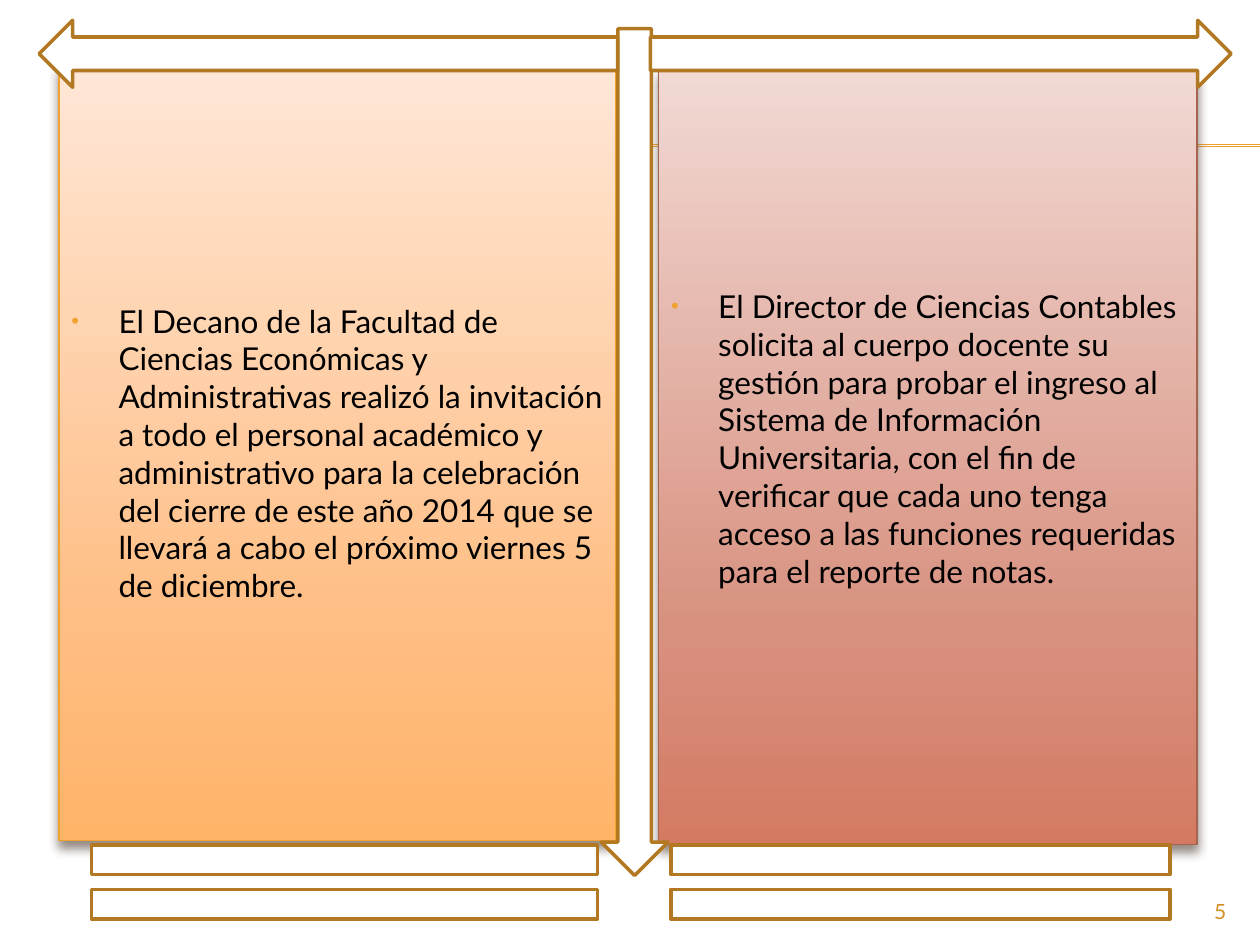
import copy

import pptx
import pptx.dml.color
import pptx.enum.shapes
import pptx.enum.text
import pptx.oxml
import pptx.oxml.ns
import pptx.util

Cm, Pt = pptx.util.Cm, pptx.util.Pt
MSO = pptx.enum.shapes.MSO_SHAPE
ALIGN = pptx.enum.text.PP_ALIGN
ANCHOR = pptx.enum.text.MSO_ANCHOR
qn = pptx.oxml.ns.qn

# Content: boxes are left, top, width, height in cm
PANELS = [
    dict(box=(1.19, 1.32, 11.23, 15.62), line="F0A22E", bottom=0.13,
         stops=[(0, "FFE7D7"), (0.72, "FFBE84"), (1, "FFB468")],
         text="El Decano de la Facultad de Ciencias Económicas y Administrativas "
              "realizó la invitación a todo el personal académico y administrativo "
              "para la celebración del cierre de este año 2014 que se llevará a cabo "
              "el próximo viernes 5 de diciembre."),
    dict(box=(13.28, 1.4, 10.85, 15.62), line="A5644E", bottom=0.88,
         stops=[(0, "F1D9D4"), (0.72, "D89180"), (1, "D47A62")],
         text="El Director de Ciencias Contables solicita al cuerpo docente su "
              "gestión para probar el ingreso al Sistema de Información "
              "Universitaria, con el fin de verificar que cada uno tenga acceso a "
              "las funciones requeridas para el reporte de notas."),
]
FRAME = [
    (MSO.DOWN_ARROW, (12.12, 0.58, 1.35, 17.07)),
    (MSO.RIGHT_ARROW, (13.11, 0.41, 11.71, 1.35)),
    (MSO.LEFT_ARROW, (0.79, 0.41, 11.66, 1.35)),
    (MSO.MATH_EQUAL, (0, 16.51, 13.89, 2.54)),
    (MSO.MATH_EQUAL, (11.71, 16.51, 13.69, 2.54)),
]
RULES_Y = [2.92, 2.95]
RULE_LEFT, SLIDE_W, SLIDE_H = 1.42, 25.4, 19.05
ACCENT = "F0A22E"


def rgb(color):
    return pptx.dml.color.RGBColor.from_string(color)


def xml(tag, body="", attrs=""):
    ns = pptx.oxml.ns.nsdecls("a")
    return pptx.oxml.parse_xml(f"<a:{tag} {ns} {attrs}>{body}</a:{tag}>")


def write(sp, text, size=18, color="000000", align=ALIGN.LEFT,
          anchor=ANCHOR.TOP, bottom=0.13, bullet=False):
    tf = sp.text_frame
    tf.word_wrap = True
    tf.vertical_anchor = anchor
    tf.margin_bottom = Cm(bottom)
    p = tf.paragraphs[0]
    p.alignment = align
    if bullet:
        pPr = p._p.get_or_add_pPr()
        pPr.set("marL", str(Cm(0.95)))
        pPr.set("indent", str(-Cm(0.95)))
        pPr.append(xml("buClr", f'<a:srgbClr val="{ACCENT}"/>'))
        pPr.append(xml("buSzPct", attrs='val="70000"'))
        pPr.append(xml("buFont", attrs='typeface="Arial"'))
        pPr.append(xml("buChar", attrs='char="•"'))
    r = p.add_run()
    r.text = text
    r.font.name, r.font.size = "Lato", Pt(size)
    r.font.color.rgb = rgb(color)


def add_shape(s, kind, box, line, width):
    sp = s.shapes.add_shape(kind, *map(Cm, box))
    sp.shadow.inherit = False
    sp.line.color.rgb = rgb(line)
    sp.line.width = Pt(width)
    return sp


def shade(sp, stops):
    sp.fill.gradient()
    sp.fill.gradient_angle = 270
    gs_list = sp._element.spPr.find(".//" + qn("a:gsLst"))
    gs_list.append(copy.deepcopy(gs_list[0]))
    for stop, (position, color) in zip(sp.fill.gradient_stops, stops):
        stop.color.rgb = rgb(color)
        stop.position = position


def drop_shadow(sp):
    sp._element.spPr.find(qn("a:effectLst")).append(xml(
        "outerShdw",
        '<a:srgbClr val="4E3B30"><a:alpha val="60000"/></a:srgbClr>',
        f'blurRad="{Pt(6)}" dist="{Pt(4)}" dir="5400000" rotWithShape="0"'))


prs = pptx.Presentation()
prs.slide_width, prs.slide_height = Cm(SLIDE_W), Cm(SLIDE_H)
s = prs.slides.add_slide(prs.slide_layouts[6])

# Double rule behind everything
for y in RULES_Y:
    rule = s.shapes.add_connector(pptx.enum.shapes.MSO_CONNECTOR.STRAIGHT,
                                  Cm(RULE_LEFT), Cm(y), Cm(SLIDE_W), Cm(y))
    rule.line.color.rgb = rgb(ACCENT)
    rule.line.width = Pt(0.75)
    rule._element.spPr.append(xml("effectLst"))

# Text panels
for panel in PANELS:
    sp = add_shape(s, MSO.RECTANGLE, panel["box"], panel["line"], 0.79)
    shade(sp, panel["stops"])
    drop_shadow(sp)
    write(sp, panel["text"], anchor=ANCHOR.MIDDLE, bottom=panel["bottom"], bullet=True)

# Arrows and equal signs
for kind, box in FRAME:
    sp = add_shape(s, kind, box, "B27822", 2)
    sp.fill.solid()
    sp.fill.fore_color.rgb = rgb("FFFFFF")

# Slide number
number = s.shapes.add_textbox(*map(Cm, (22.86, 17.98, 2.11, 0.69)))
write(number, "5", size=12, color="D48F29", align=ALIGN.RIGHT)

prs.save("out.pptx")
